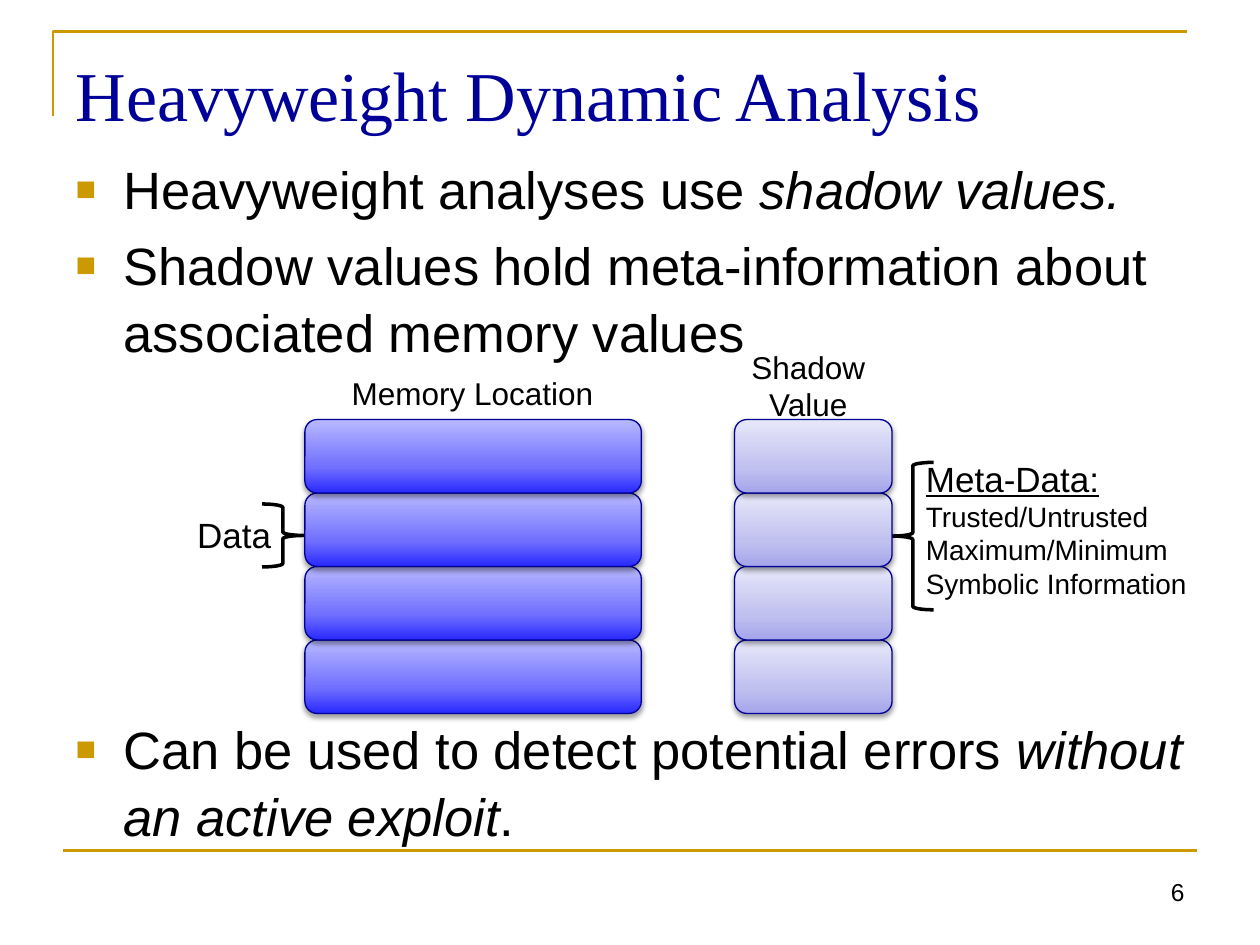
import pptx
import pptx.util
import pptx.oxml
from pptx.dml.color import RGBColor
from pptx.enum.shapes import MSO_CONNECTOR, MSO_SHAPE
from pptx.enum.text import MSO_ANCHOR, MSO_AUTO_SIZE, PP_ALIGN
from pptx.util import Inches, Pt

GOLD = RGBColor(0xCC, 0x99, 0x00)
NAVY = RGBColor(0x00, 0x00, 0x99)
EDGE = RGBColor(0x00, 0x00, 0x96)
BLACK = RGBColor(0, 0, 0)
NS = 'xmlns:a="http://schemas.openxmlformats.org/drawingml/2006/main"'

# Content: a paragraph is a list of runs (text, format)
TITLE = "Heavyweight Dynamic Analysis"
ITALIC = {"italic": True}
BULLETS = [
    [("Heavyweight analyses use ", {}), ("shadow values.", ITALIC)],
    [("Shadow values hold meta-information about associated memory values", {})],
    [("Can be used to detect potential errors ", {}),
     ("without an active exploit", ITALIC), (".", {})],
]
GAPS = [0, 6, 201]  # points before each bullet; the last clears the diagram
META = [
    [("Meta-Data:", {"size": 20, "underline": True})],
    [("Trusted/Untrusted", {})],
    [("Maximum/Minimum", {})],
    [("Symbolic Information", {})],
]
LABELS = [  # text, box, size, alignment
    ("6", (7.17, 6.91, 2.33, 0.51), 14, PP_ALIGN.RIGHT),
    ("Memory Location", (2.5, 2.92, 2.5, 0.4), 18, PP_ALIGN.CENTER),
    ("Shadow Value", (5.83, 2.71, 1.17, 0.71), 18, PP_ALIGN.CENTER),
    ("Data", (1.33, 4.03, 0.92, 0.45), 20, PP_ALIGN.RIGHT),
    (META, (7.25, 3.58, 2.42, 1.25), 16, PP_ALIGN.LEFT),
]
BRACES = [
    (MSO_SHAPE.RIGHT_BRACE, (2.08, 4, 0.33, 0.5)),
    (MSO_SHAPE.LEFT_BRACE, (7.08, 3.67, 0.33, 1.17)),
]
STACKS = [  # left, width, colours from bottom to top
    (5.83, 1.25, ("A5A5EB", "C1C1F0", "E7E7FA")),
    (2.42, 2.67, ("2929FF", "7070FF", "B8B8FF")),
]
ROWS, TOP, PITCH = 4, 3.33, 0.583


def spots(box):
    return [Inches(n) for n in box]


def place(shape, box):
    shape.left, shape.top, shape.width, shape.height = spots(box)


def write(frame, text, size=18, face="Arial", color=BLACK, align=PP_ALIGN.LEFT):
    """Fill a text frame from a string or a list of paragraphs."""
    frame.word_wrap = True
    frame.auto_size = MSO_AUTO_SIZE.NONE
    frame.vertical_anchor = MSO_ANCHOR.TOP
    paras = [[(text, {})]] if isinstance(text, str) else text
    for i, runs in enumerate(paras):
        para = frame.add_paragraph() if i else frame.paragraphs[0]
        para.alignment = align
        for words, look in runs:
            run = para.add_run()
            run.text = words
            font = run.font
            font.name, font.color.rgb = face, color
            font.size = Pt(look.get("size", size))
            font.italic = look.get("italic", False)
            font.underline = look.get("underline", False)


def bullet(para, gap):
    props = para._p.get_or_add_pPr()
    props.set("marL", str(Inches(0.38)))
    props.set("indent", str(-Inches(0.38)))
    for part in (f'<a:buClr {NS}><a:srgbClr val="{GOLD}"/></a:buClr>',
                 f'<a:buSzPct {NS} val="65000"/>',
                 f'<a:buFont {NS} typeface="Arial"/>',
                 f'<a:buChar {NS} char="■"/>'):
        props.append(pptx.oxml.parse_xml(part))
    para.line_spacing = 1.05
    para.space_before = Pt(gap)


def outline(shape, color, width):
    shape.line.color.rgb = color
    shape.line.width = Pt(width)


def cell(shapes, box, tints):
    """Draw one rounded memory cell with an upward gradient and a soft shadow."""
    shape = shapes.add_shape(MSO_SHAPE.ROUNDED_RECTANGLE, *spots(box))
    shape.fill.background()
    outline(shape, EDGE, 0.75)
    stops = "".join(f'<a:gs pos="{pos}"><a:srgbClr val="{tint}"/></a:gs>'
                    for pos, tint in zip((0, 35000, 100000), tints))
    grad = (f'<a:gradFill {NS} rotWithShape="1"><a:gsLst>{stops}</a:gsLst>'
            '<a:lin ang="16200000" scaled="0"/></a:gradFill>')
    shade = (f'<a:effectLst {NS}><a:outerShdw blurRad="{Pt(3.1)}" dist="{Pt(1.6)}" '
             'dir="5400000" rotWithShape="0"><a:srgbClr val="000000">'
             '<a:alpha val="38000"/></a:srgbClr></a:outerShdw></a:effectLst>')
    props = shape._element.spPr
    old = props.find(pptx.oxml.ns.qn("a:noFill"))
    props.replace(old, pptx.oxml.parse_xml(grad))
    props.append(pptx.oxml.parse_xml(shade))


def main():
    deck = pptx.Presentation()
    deck.slide_width, deck.slide_height = Inches(10), Inches(7.5)
    slide = deck.slides.add_slide(deck.slide_layouts[1])
    shapes = slide.shapes

    # Gold frame lines
    pen = shapes.build_freeform(Inches(0.42), Inches(0.92))
    pen.add_line_segments([spots((0.42, 0.25)), spots((9.42, 0.25))], close=False)
    frame = pen.convert_to_shape()
    frame.fill.background()
    frame.shadow.inherit = False
    outline(frame, GOLD, 1.5)
    rule = shapes.add_connector(MSO_CONNECTOR.STRAIGHT, *spots((0.5, 6.75, 9.5, 6.75)))
    outline(rule, GOLD, 1.5)
    rule._element.spPr.append(pptx.oxml.parse_xml(f"<a:effectLst {NS}/>"))

    # Title and bullets
    place(shapes.title, (0.5, 0.3, 9, 0.7))
    write(shapes.title.text_frame, TITLE, size=40, face="Times New Roman", color=NAVY)
    shapes.title.text_frame.margin_top = Inches(0.11)
    body = slide.placeholders[1]
    place(body, (0.5, 1.17, 9, 5.54))
    write(body.text_frame, BULLETS, size=30)
    for para, gap in zip(body.text_frame.paragraphs, GAPS):
        bullet(para, gap)

    # Labels and braces
    for text, box, size, align in LABELS:
        label = shapes.add_textbox(*spots(box))
        write(label.text_frame, text, size=size, align=align)
    for kind, box in BRACES:
        brace = shapes.add_shape(kind, *spots(box))
        brace.fill.background()
        brace.shadow.inherit = False
        outline(brace, BLACK, 2)

    # Memory and shadow stacks, lowest cell first
    for left, width, tints in STACKS:
        for row in reversed(range(ROWS)):
            cell(shapes, (left, TOP + row * PITCH, width, PITCH), tints)

    deck.save("out.pptx")


if __name__ == "__main__":
    main()
